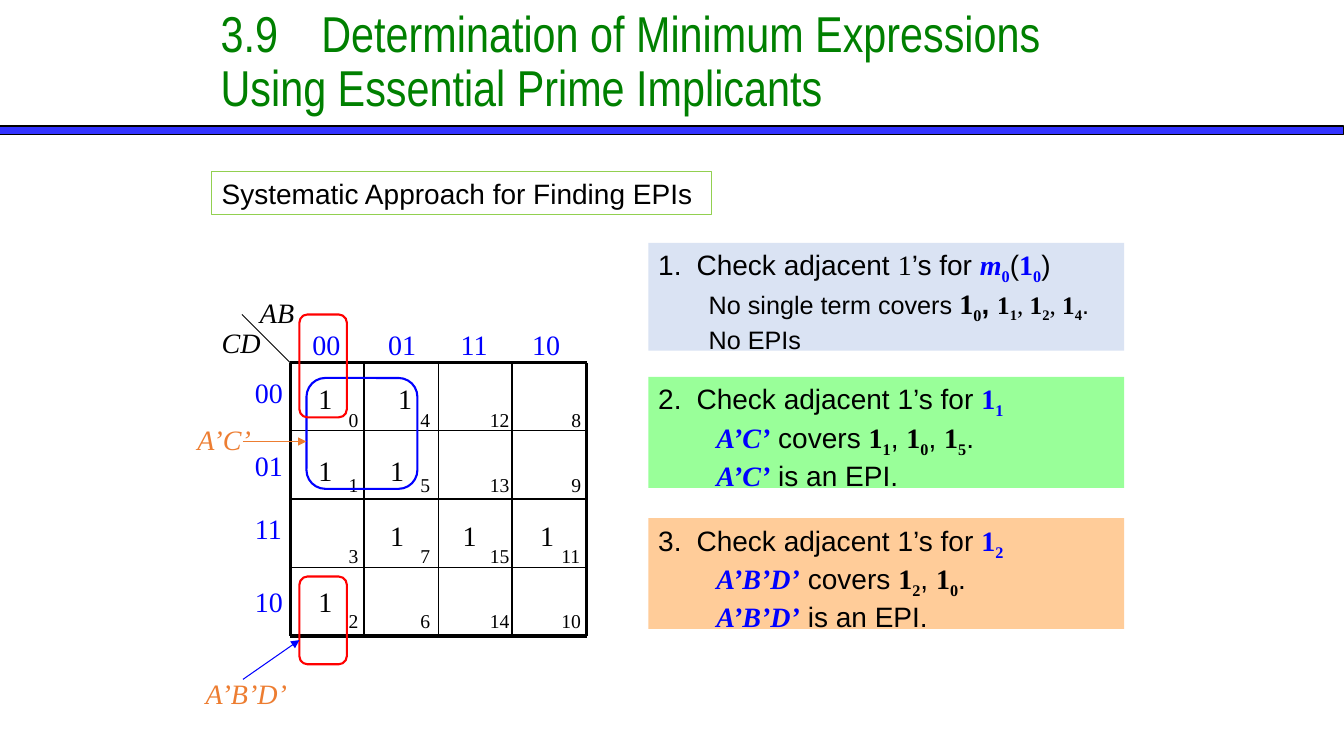
import pptx
import pptx.util
import pptx.dml.color
import pptx.enum.shapes
import pptx.enum.text
import pptx.oxml

PX = 9144  # one hundredth of an inch in EMU
THEME = {
    "sans": "Arial", "serif": "Times New Roman", "narrow": "Arial Narrow",
    "black": "000000", "blue": "0000FF", "orange": "ED7D31", "red": "FF0000",
    "green": "008000", "bar": "3333FF", "frame": "92D050",
    "step_fills": ["DAE3F3", "99FF99", "FFCC99"],
    "title": 36, "body": 20, "detail": 18, "index": 14,
}
# Span styles: font, colour, bold, italic, subscript
STYLES = {
    "title": ("narrow", "green", False, False, False),
    "plain": ("sans", "black", False, False, False),
    "comma": ("sans", "black", True, False, False),
    "digit": ("serif", "black", False, False, False),
    "axis": ("serif", "blue", False, False, False),
    "variable": ("serif", "black", False, True, False),
    "term": ("serif", "orange", False, True, False),
    "one": ("serif", "black", True, False, False),
    "sub": ("serif", "black", True, False, True),
    "key": ("serif", "blue", True, False, False),
    "keysub": ("serif", "blue", True, False, True),
    "implicant": ("serif", "blue", True, True, False),
}
SHAPES = pptx.enum.shapes.MSO_SHAPE
ANCHOR = pptx.enum.text.MSO_ANCHOR
NAMESPACE = 'xmlns:a="http://schemas.openxmlformats.org/drawingml/2006/main"'
rgb = pptx.dml.color.RGBColor.from_string

deck = pptx.Presentation()
deck.slide_width, deck.slide_height = 1333 * PX, 750 * PX
page = deck.slides.add_slide(deck.slide_layouts[6])


def add_box(kind, bounds, fill=None, line=None, width=0.75, lines=(), wrap=True):
    """Add a shape, or a text box if kind is None; lines hold (size, spans)."""
    place = [value * PX for value in bounds]
    if kind is None:
        box = page.shapes.add_textbox(*place)
    else:
        box = page.shapes.add_shape(kind, *place)
        box.shadow.inherit = False
    if fill:
        box.fill.solid()
        box.fill.fore_color.rgb = rgb(fill)
    else:
        box.fill.background()
    if line:
        box.line.color.rgb = rgb(line)
        box.line.width = pptx.util.Pt(width)
    else:
        box.line.fill.background()
    frame = box.text_frame
    frame.word_wrap = wrap
    frame.vertical_anchor = ANCHOR.TOP
    for number, (size, spans) in enumerate(lines):
        para = frame.paragraphs[0] if number == 0 else frame.add_paragraph()
        para.alignment = pptx.enum.text.PP_ALIGN.LEFT
        for words, style in spans:
            if words == "\n":
                para.add_line_break()
                continue
            span = para.add_run()
            span.text = words
            face, color, bold, italic, subscript = STYLES[style]
            span.font.name, span.font.size = THEME[face], pptx.util.Pt(size)
            span.font.color.rgb = rgb(THEME[color])
            span.font.bold, span.font.italic = bold, italic
            if subscript:
                span.font._element.set("baseline", "-25000")
    return box


def add_line(start, end, color, width=0.75, arrow=False):
    line = page.shapes.add_connector(
        pptx.enum.shapes.MSO_CONNECTOR.STRAIGHT, *[value * PX for value in start + end])
    line.line.color.rgb = rgb(color)
    line.line.width = pptx.util.Pt(width)
    if arrow:
        line.line._get_or_add_ln().append(
            pptx.oxml.parse_xml(f'<a:tailEnd {NAMESPACE} type="triangle"/>'))
    line._element.spPr.append(pptx.oxml.parse_xml(f"<a:effectLst {NAMESPACE}/>"))


# Title, rule and subtitle
add_box(SHAPES.RECTANGLE, (0, 125, 1333, 8), THEME["bar"], THEME["black"])
title = add_box(None, (209, 0, 923, 125), lines=[(THEME["title"], [
    ("3.9\tDetermination of Minimum Expressions", "title"), ("\n", "title"),
    ("Using Essential Prime Implicants", "title")])])
title.text_frame.vertical_anchor = ANCHOR.MIDDLE
title.text_frame.paragraphs[0].line_spacing = 0.9
add_box(SHAPES.RECTANGLE, (210, 170, 496, 43), line=THEME["frame"], lines=[
    (THEME["body"], [("Systematic Approach for Finding EPIs", "plain")])])

# Karnaugh map grid
LEFT, TOP, RIGHT, BOTTOM = 288, 360, 582, 631
for step in range(5):
    weight = 2.25 if step in (0, 4) else 1
    x = LEFT + (RIGHT - LEFT) * step // 4
    y = TOP + (BOTTOM - TOP) * step // 4
    add_line((LEFT, y), (RIGHT, y), THEME["black"], weight)
    add_line((x, TOP), (x, BOTTOM), THEME["black"], weight)
add_line((LEFT, TOP), (240, 312), THEME["black"])

# Map labels: variables, Gray code, minterm numbers and ones
labels = [("AB", 248, 288, 54, "variable"), ("CD", 210, 318, 59, "variable"),
          ("A’C’", 186, 414, 74, "term"), ("A’B’D’", 194, 666, 102, "term")]
GRAY = ["00", "01", "11", "10"]
labels += [(code, x, 320, 48, "axis") for code, x in zip(GRAY, (300, 375, 447, 518))]
labels += [(code, 243, y, 48, "axis") for code, y in zip(GRAY, (368, 440, 503, 575))]
ONES = {374: (306, 385), 445: (306, 377), 509: (377, 449, 526), 575: (306,)}
labels += [("1", x, y, 34, "digit") for y, columns in ONES.items() for x in columns]
for words, x, y, width, style in labels:
    add_box(None, (x, y, width, 43), lines=[(THEME["body"], [(words, style)])], wrap=False)
for code_row, y in zip(GRAY, (400, 464, 535, 599)):
    for code_column, edge in zip(GRAY, (366, 437, 516, 587)):
        minterm = str(int(code_column + code_row, 2))
        width = 20 + 10 * len(minterm)
        add_box(None, (edge - width, y, width, 33), wrap=False,
                lines=[(THEME["index"], [(minterm, "digit")])])

# Loops around the prime implicants, with arrows from their names
for bounds, color in [((304, 375, 110, 110), "blue"), ((297, 572, 47, 87), "red"),
                      ((297, 312, 47, 102), "red")]:
    loop = add_box(SHAPES.ROUNDED_RECTANGLE, bounds, line=THEME[color], width=1.5)
    loop.adjustments[0] = 0.17
add_line((241, 438), (304, 438), THEME["orange"], arrow=True)
add_line((241, 674), (297, 635), THEME["blue"], arrow=True)

# Numbered steps
BODY, DETAIL = THEME["body"], THEME["detail"]
steps = [(241, 107, [
    (BODY, [("Check adjacent ", "plain"), ("1", "digit"), ("’s for ", "plain"),
            ("m", "implicant"), ("0", "keysub"), ("(", "plain"), ("1", "key"),
            ("0", "keysub"), (")", "plain")]),
    (DETAIL, [("No single term covers ", "plain"), ("1", "one"), ("0", "sub"),
              (", ", "comma"), ("1", "one"), ("1", "sub"), (", ", "digit"),
              ("1", "one"), ("2", "sub"), (", ", "digit"), ("1", "one"),
              ("4", "sub"), (".", "plain")]),
    (DETAIL, [("No EPIs", "plain")])])]
for y, target, term, covered in [(374, "1", "A’C’", "105"), (514, "2", "A’B’D’", "20")]:
    cover = [(" ", "plain"), (term, "implicant"), (" covers ", "plain")]
    for number, minterm in enumerate(covered):
        separator = "." if number == len(covered) - 1 else ", "
        cover += [("1", "one"), (minterm, "sub"), (separator, "plain")]
    steps.append((y, 110, [
        (BODY, [("Check adjacent 1’s for ", "plain"), ("1", "key"), (target, "keysub")]),
        (BODY, cover),
        (BODY, [(" ", "plain"), (term, "implicant"), (" is an EPI.", "plain")])]))
for number, (y, height, lines) in enumerate(steps):
    box = add_box(SHAPES.RECTANGLE, (643, y, 472, height),
                  THEME["step_fills"][number], lines=lines)
    for level, para in enumerate(box.text_frame.paragraphs):
        properties = para._p.get_or_add_pPr()
        properties.set("marL", str((88 if level else 38) * PX))
        properties.set("indent", str(-38 * PX))
        if level == 0:
            properties.append(pptx.oxml.parse_xml(
                f'<a:buAutoNum {NAMESPACE} type="arabicPeriod" startAt="{number + 1}"/>'))
    if number == 0:
        # The first covered minterm is set larger than the rest of its line
        for span in box.text_frame.paragraphs[1].runs[1:4]:
            span.font.size = pptx.util.Pt(BODY)
deck.save("out.pptx")
